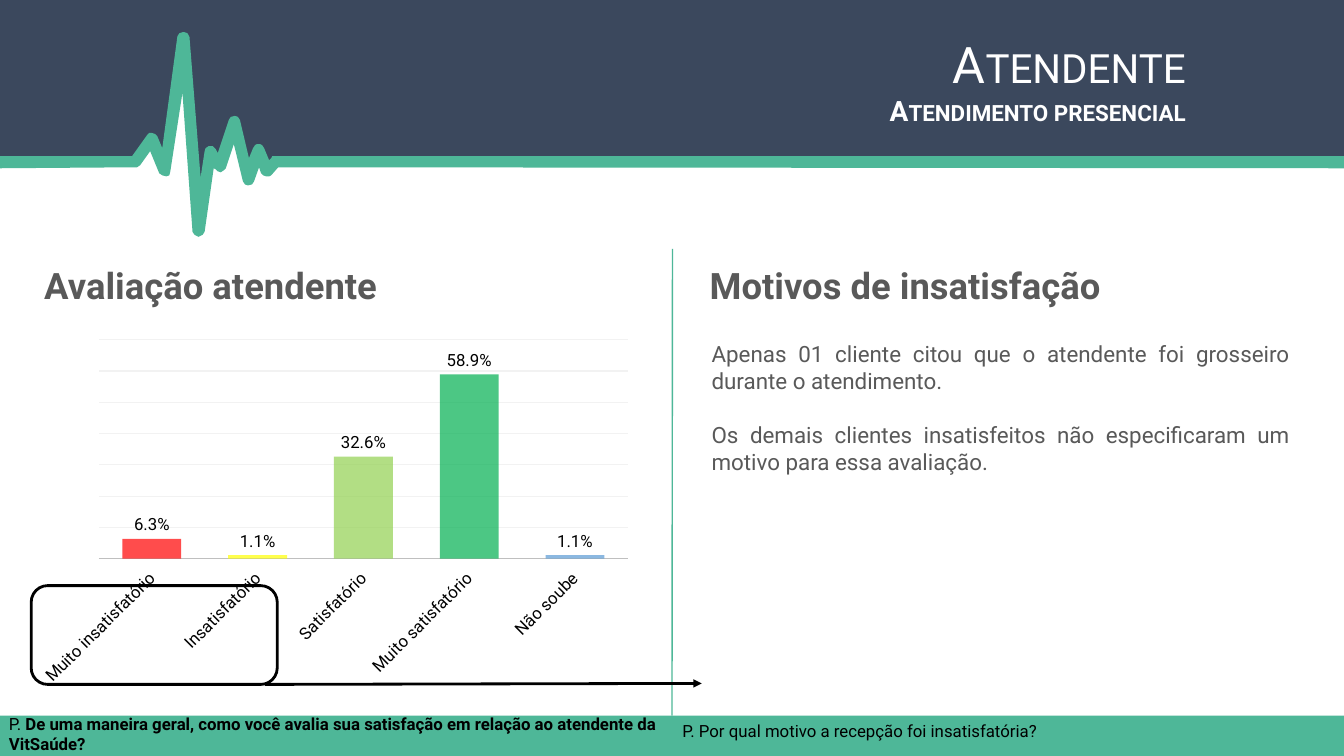
from dataclasses import dataclass

from lxml.etree import SubElement
from pptx import Presentation
from pptx.chart.data import CategoryChartData
from pptx.dml.color import RGBColor as Rgb
from pptx.enum.chart import XL_CHART_TYPE as ChartType
from pptx.enum.chart import XL_LABEL_POSITION as LabelPosition
from pptx.enum.chart import XL_TICK_LABEL_POSITION as TickLabels
from pptx.enum.chart import XL_TICK_MARK as TickMark
from pptx.enum.shapes import MSO_CONNECTOR as Connector
from pptx.enum.shapes import MSO_SHAPE as Shape
from pptx.enum.text import MSO_AUTO_SIZE as AutoSize
from pptx.enum.text import PP_ALIGN as Align
from pptx.oxml.ns import qn
from pptx.util import Inches, Pt


@dataclass(frozen=True)
class Theme:
    font: str = "Roboto"
    navy: str = "3B485D"
    green: str = "4EB798"
    white: str = "FFFFFF"
    black: str = "000000"
    gray: str = "595959"
    axis: str = "BFBFBF"
    grid: str = "F2F2F2"
    title: int = 36
    heading: int = 26
    subtitle: int = 20
    body: int = 16
    small: int = 12


WIDTH, HEIGHT = 13.33, 7.5

HEADER = [
    (13.33, 0), (0, 0), (0, 1.61), (1.34, 1.6), (1.52, 1.41), (1.62, 1.67),
    (1.81, 0.74), (1.97, 2.04), (2.08, 1.55), (2.18, 1.65), (2.31, 1.26),
    (2.46, 1.76), (2.58, 1.53), (2.65, 1.69), (2.75, 1.6), (13.33, 1.61),
]
PULSE = [
    (13.33, 1.55), (2.73, 1.55), (2.7, 1.55), (2.69, 1.57), (2.67, 1.59),
    (2.62, 1.47), (2.6, 1.44), (2.58, 1.43), (2.55, 1.43), (2.53, 1.44),
    (2.51, 1.47), (2.47, 1.57), (2.38, 1.19), (2.36, 1.16), (2.33, 1.15),
    (2.29, 1.16), (2.27, 1.19), (2.16, 1.52), (2.14, 1.48), (2.11, 1.45),
    (2.07, 1.45), (2.04, 1.47), (2.03, 1.5), (1.99, 1.76), (1.88, 0.37),
    (1.86, 0.33), (1.83, 0.32), (1.81, 0.32), (1.78, 0.33), (1.76, 0.36),
    (1.61, 1.47), (1.56, 1.35), (1.54, 1.33), (1.51, 1.32), (1.48, 1.32),
    (1.46, 1.34), (1.31, 1.55), (0, 1.55), (0, 1.67), (1.34, 1.66),
    (1.36, 1.66), (1.39, 1.64), (1.49, 1.5), (1.58, 1.72), (1.61, 1.74),
    (1.65, 1.75), (1.68, 1.74), (1.69, 1.7), (1.81, 0.92), (1.91, 2.3),
    (1.93, 2.33), (1.97, 2.35), (2.01, 2.33), (2.03, 2.3), (2.12, 1.67),
    (2.14, 1.68), (2.16, 1.7), (2.19, 1.71), (2.22, 1.69), (2.24, 1.67),
    (2.32, 1.43), (2.41, 1.8), (2.43, 1.83), (2.46, 1.84), (2.5, 1.83),
    (2.52, 1.8), (2.57, 1.66), (2.59, 1.72), (2.61, 1.74), (2.64, 1.75),
    (2.67, 1.75), (2.69, 1.74), (2.76, 1.66), (13.33, 1.67),
]
RATINGS = [
    ("Muito insatisfatório", 0.063, "FF0000"),
    ("Insatisfatório", 0.011, "FFFF00"),
    ("Satisfatório", 0.326, "92D050"),
    ("Muito satisfatório", 0.589, "00B050"),
    ("Não soube", 0.011, "5B9BD5"),
]


def apply(target, values):
    for name, value in values.items():
        setattr(target, name, value)


class SlideBuilder:
    def __init__(self, slide, theme):
        self.shapes = slide.shapes
        self.theme = theme

    def style_font(self, font, size, color, bold=False):
        apply(font, {"name": self.theme.font, "size": Pt(size), "bold": bold})
        font.color.rgb = Rgb.from_string(color)

    def style_line(self, line, color, width):
        line.color.rgb = Rgb.from_string(color)
        line.width = Pt(width)

    def paint(self, shape, fill=None, line=None, width=1):
        shape.shadow.inherit = False
        if fill:
            shape.fill.solid()
            shape.fill.fore_color.rgb = Rgb.from_string(fill)
        else:
            shape.fill.background()
        if line:
            self.style_line(shape.line, line, width)
        else:
            shape.line.fill.background()
        return shape

    def outline(self, points, fill):
        corners = [(Inches(x), Inches(y)) for x, y in points]
        builder = self.shapes.build_freeform(*corners[0])
        builder.add_line_segments(corners[1:], close=True)
        return self.paint(builder.convert_to_shape(), fill)

    def box(self, kind, bounds, **look):
        return self.paint(self.shapes.add_shape(kind, *map(Inches, bounds)), **look)

    def text(self, bounds, paragraphs, color, align=Align.LEFT, gap=0, small_caps=False):
        frame = self.shapes.add_textbox(*map(Inches, bounds)).text_frame
        apply(frame, {"word_wrap": True, "auto_size": AutoSize.SHAPE_TO_FIT_TEXT})
        for index, runs in enumerate(paragraphs):
            paragraph = frame.add_paragraph() if index else frame.paragraphs[0]
            paragraph.alignment = align
            if index and gap:
                paragraph.space_before = Pt(gap)
            for words, size, bold in runs:
                run = paragraph.add_run()
                run.text = words
                self.style_font(run.font, size, color, bold)
                if small_caps:
                    run.font._element.set("cap", "small")

    def line(self, start, end, color, width, arrow=False):
        ends = map(Inches, (*start, *end))
        connector = self.shapes.add_connector(Connector.STRAIGHT, *ends)
        self.style_line(connector.line, color, width)
        properties = connector._element.spPr
        if arrow:
            SubElement(properties.find(qn("a:ln")), qn("a:tailEnd"), type="triangle")
        SubElement(properties, qn("a:effectLst"))
        return connector

    def rating_chart(self, bounds, ratings):
        theme = self.theme
        data = CategoryChartData(number_format="0.0%")
        data.categories = [name for name, _, _ in ratings]
        data.add_series("Series 1", [share for _, share, _ in ratings])
        chart = self.shapes.add_chart(
            ChartType.COLUMN_CLUSTERED, *map(Inches, bounds), data
        ).chart
        apply(chart, {"has_legend": False, "has_title": False})
        self.style_font(chart.font, 10, theme.black)

        shares = chart.value_axis
        apply(shares, {"minimum_scale": 0, "maximum_scale": 0.7, "major_unit": 0.1,
                       "has_major_gridlines": True, "visible": False})
        self.style_line(shares.major_gridlines.format.line, theme.grid, 0.75)
        names = chart.category_axis
        apply(names, {"major_tick_mark": TickMark.NONE,
                      "minor_tick_mark": TickMark.NONE,
                      "tick_label_position": TickLabels.LOW})
        self.style_line(names.format.line, theme.axis, 1.25)
        self.style_font(names.tick_labels.font, theme.small, theme.black)
        names._element.find(qn("c:txPr")).find(qn("a:bodyPr")).set("rot", "-2700000")

        plot = chart.plots[0]
        apply(plot, {"gap_width": 80, "overlap": 25, "vary_by_categories": False,
                     "has_data_labels": True})
        apply(plot.data_labels, {"show_value": True, "number_format": "0.0%",
                                 "number_format_is_linked": False,
                                 "position": LabelPosition.OUTSIDE_END})
        self.style_font(plot.data_labels.font, theme.small, theme.black)
        series = plot.series[0]
        series.invert_if_negative = False
        for index, (_, _, color) in enumerate(ratings):
            fill = series.points[index].format.fill
            fill.solid()
            fill.fore_color.rgb = Rgb.from_string(color)
        for color in series._element.iter(qn("a:srgbClr")):
            SubElement(color, qn("a:alpha"), val="70000")
        self.place_plot(chart, {"x": 0.12, "y": 0.02, "w": 0.86, "h": 0.61})

    def place_plot(self, chart, fractions):
        area = chart._chartSpace.find(".//" + qn("c:plotArea"))
        layout = area.find(qn("c:layout"))
        if layout is None:
            layout = SubElement(area, qn("c:layout"))
            area.insert(0, layout)
        manual = SubElement(layout, qn("c:manualLayout"))
        settings = {"layoutTarget": "inner", "xMode": "edge", "yMode": "edge", **fractions}
        for name, value in settings.items():
            SubElement(manual, qn("c:" + name), val=str(value))


def main():
    theme = Theme()
    deck = Presentation()
    apply(deck, {"slide_width": Inches(WIDTH), "slide_height": Inches(HEIGHT)})
    page = SlideBuilder(deck.slides.add_slide(deck.slide_layouts[6]), theme)

    page.outline(HEADER, theme.navy)
    page.outline(PULSE, theme.green)
    page.rating_chart((0.25, 3.3, 6.1, 3.56), RATINGS)
    footer = page.box(Shape.RECTANGLE, (0, 7.1, WIDTH, 0.4), fill=theme.green)
    page.text((2.46, 0.28, 9.4, 1.04),
              [[("Atendente", theme.title, False)],
               [("Atendimento presencial", theme.subtitle, True)]],
              theme.white, Align.RIGHT, small_caps=True)
    page.text((-0.01, 7.03, 6.7, 0.5),
              [[("P. ", theme.small, False),
                ("De uma maneira geral, como você avalia sua satisfação em relação "
                 "ao atendente da VitSaúde?", theme.small, True)]], theme.black)
    page.text((6.67, 7.1, 4.65, 0.3),
              [[("P. Por qual motivo a recepção foi insatisfatória?", theme.small, False)]],
              theme.black)
    for left, width, heading in ((0.34, 6.01, "Avaliação atendente"),
                                 (6.94, 5.51, "Motivos de insatisfação")):
        page.text((left, 2.56, width, 0.54), [[(heading, theme.heading, True)]], theme.gray)
    divider = page.line((6.67, 2.47), (6.67, 7.1), theme.green, 1)
    divider.end_connect(footer, 0)
    page.box(Shape.ROUNDED_RECTANGLE, (0.31, 5.81, 2.44, 0.98), line=theme.black, width=2)
    page.line((2.63, 6.79), (6.96, 6.78), theme.black, 2, arrow=True)
    reasons = ("Apenas 01 cliente citou que o atendente foi grosseiro durante o atendimento.",
               "Os demais clientes insatisfeitos não especificaram um motivo para essa avaliação.")
    page.text((6.96, 3.33, 5.93, 1.45),
              [[(reason, theme.body, False)] for reason in reasons],
              theme.gray, Align.JUSTIFY, gap=19)
    deck.save("out.pptx")


if __name__ == "__main__":
    main()
